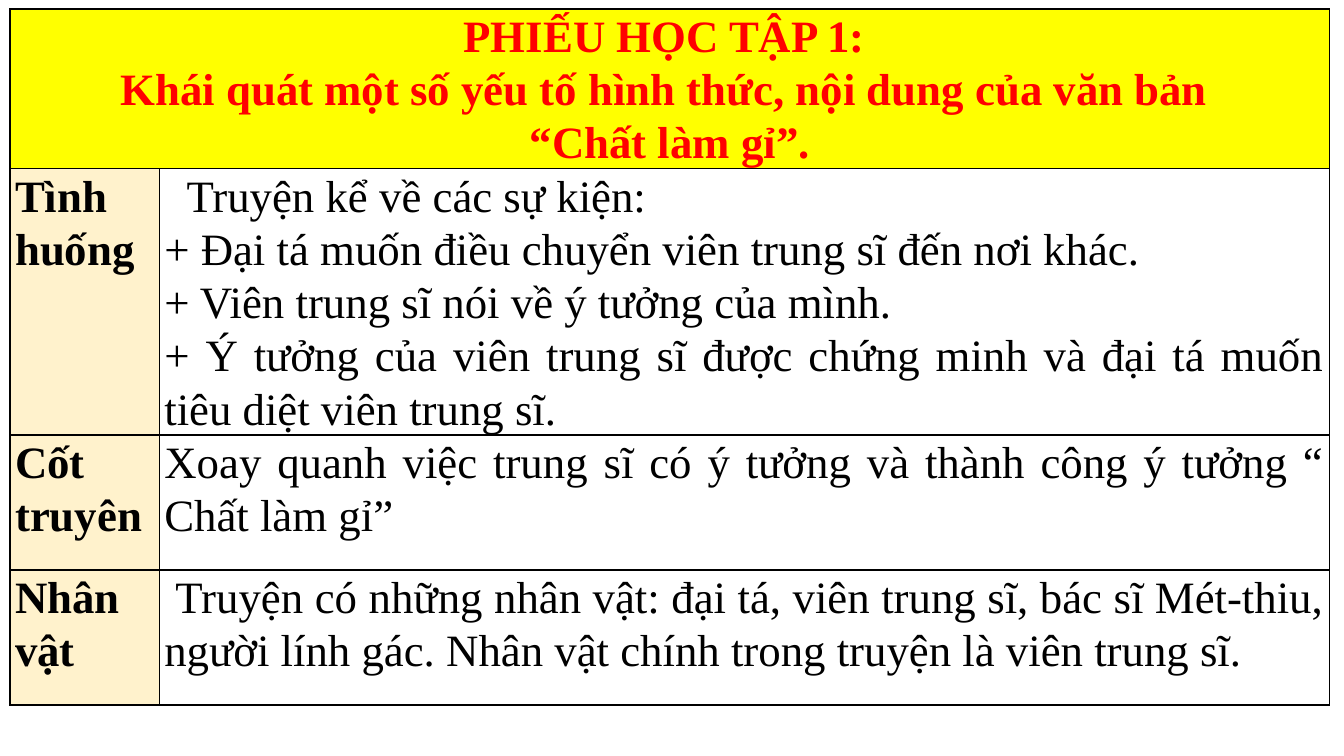
from dataclasses import dataclass

from lxml import etree
from pptx import Presentation
from pptx import util as u
from pptx.dml.color import RGBColor
from pptx.enum import text
from pptx.oxml import ns
from pptx.table import _Cell

COLOURS: dict[str, str] = {
    "heading_fill": "FFFF00",
    "heading_text": "FF0000",
    "label_fill": "FFF2CC",
    "answer_fill": "FFFFFF",
    "body_text": "000000",
    "border": "000000",
}
FONT = {"name": "Times New Roman", "size": u.Pt(32)}
MARGINS = {
    "margin_left": u.Inches(0.05),
    "margin_right": u.Inches(0.05),
    "margin_top": 0,
    "margin_bottom": 0,
}
COLUMN_WIDTHS = (1.48, 11.61)
HEADING_HEIGHT = 0.83
TABLE_HEIGHT = 7.25


@dataclass(frozen=True)
class CellStyle:
    fill: str
    colour: str
    bold: bool
    alignment: text.PP_ALIGN


@dataclass(frozen=True)
class Topic:
    label: str
    answers: tuple[str, ...]
    height: float
    first_indent: float = 0


HEADING = CellStyle("heading_fill", "heading_text", True, text.PP_ALIGN.CENTER)
LABEL = CellStyle("label_fill", "body_text", True, text.PP_ALIGN.JUSTIFY)
ANSWER = CellStyle("answer_fill", "body_text", False, text.PP_ALIGN.JUSTIFY)

HEADING_LINES = (
    "PHIẾU HỌC TẬP 1: ",
    "Khái quát một số yếu tố hình thức, nội dung của văn bản ",
    "“Chất làm gỉ”.",
)
TOPICS = (
    Topic(
        "Tình huống",
        (
            "Truyện kể về các sự kiện:",
            "+ Đại tá muốn điều chuyển viên trung sĩ đến nơi khác.",
            "+ Viên trung sĩ nói về ý tưởng của mình.",
            "+ Ý tưởng của viên trung sĩ được chứng minh và đại tá muốn "
            "tiêu diệt viên trung sĩ.",
        ),
        2.12,
        0.22,
    ),
    Topic(
        "Cốt truyên",
        ("Xoay quanh việc trung sĩ có ý tưởng và thành công ý tưởng “ Chất làm gỉ”",),
        1.34,
    ),
    Topic(
        "Nhân vật",
        (
            "Truyện có những nhân vật: đại tá, viên trung sĩ, bác sĩ Mét-thiu, "
            "người lính gác. Nhân vật chính trong truyện là viên trung sĩ.",
        ),
        1.34,
        0.11,
    ),
)


def colour(name: str) -> RGBColor:
    return RGBColor.from_string(COLOURS[name])


def apply_format(target: object, values: dict) -> None:
    for name, value in values.items():
        setattr(target, name, value)


def draw_borders(cell: _Cell) -> None:
    properties = cell._tc.get_or_add_tcPr()
    for side in "LRTB":
        line = etree.SubElement(properties, ns.qn(f"a:ln{side}"), w=str(u.Pt(1)))
        fill = etree.SubElement(line, ns.qn("a:solidFill"))
        etree.SubElement(fill, ns.qn("a:srgbClr"), val=COLOURS["border"])


def fill_cell(
    cell: _Cell, lines: tuple[str, ...], style: CellStyle, first_indent: float = 0
) -> None:
    draw_borders(cell)
    cell.fill.solid()
    cell.fill.fore_color.rgb = colour(style.fill)
    apply_format(cell, MARGINS)
    for index, line in enumerate(lines):
        frame = cell.text_frame
        para = frame.add_paragraph() if index else frame.paragraphs[0]
        apply_format(para, {"alignment": style.alignment, "line_spacing": 1.07})
        if first_indent and index == 0:
            para._p.get_or_add_pPr().set("indent", str(u.Inches(first_indent)))
        span = para.add_run()
        span.text = line
        apply_format(span.font, {**FONT, "bold": style.bold})
        span.font.color.rgb = colour(style.colour)


def main() -> None:
    deck = Presentation()
    apply_format(
        deck, {"slide_width": u.Inches(13.33), "slide_height": u.Inches(7.5)}
    )
    page = deck.slides.add_slide(deck.slide_layouts[6])
    frame = page.shapes.add_table(
        len(TOPICS) + 1,
        len(COLUMN_WIDTHS),
        u.Inches(0.1),
        u.Inches(0.09),
        u.Inches(sum(COLUMN_WIDTHS)),
        u.Inches(TABLE_HEIGHT),
    )
    table = frame.table
    for column, width in zip(table.columns, COLUMN_WIDTHS):
        column.width = u.Inches(width)
    heights = (HEADING_HEIGHT, *(topic.height for topic in TOPICS))
    for row, height in zip(table.rows, heights):
        row.height = u.Inches(height)
    frame.height = u.Inches(TABLE_HEIGHT)

    heading = table.cell(0, 0)
    heading.merge(table.cell(0, 1))
    fill_cell(heading, HEADING_LINES, HEADING)
    draw_borders(table.cell(0, 1))
    for index, topic in enumerate(TOPICS, start=1):
        fill_cell(table.cell(index, 0), (topic.label,), LABEL)
        fill_cell(table.cell(index, 1), topic.answers, ANSWER, topic.first_indent)
    deck.save("out.pptx")


if __name__ == "__main__":
    main()
